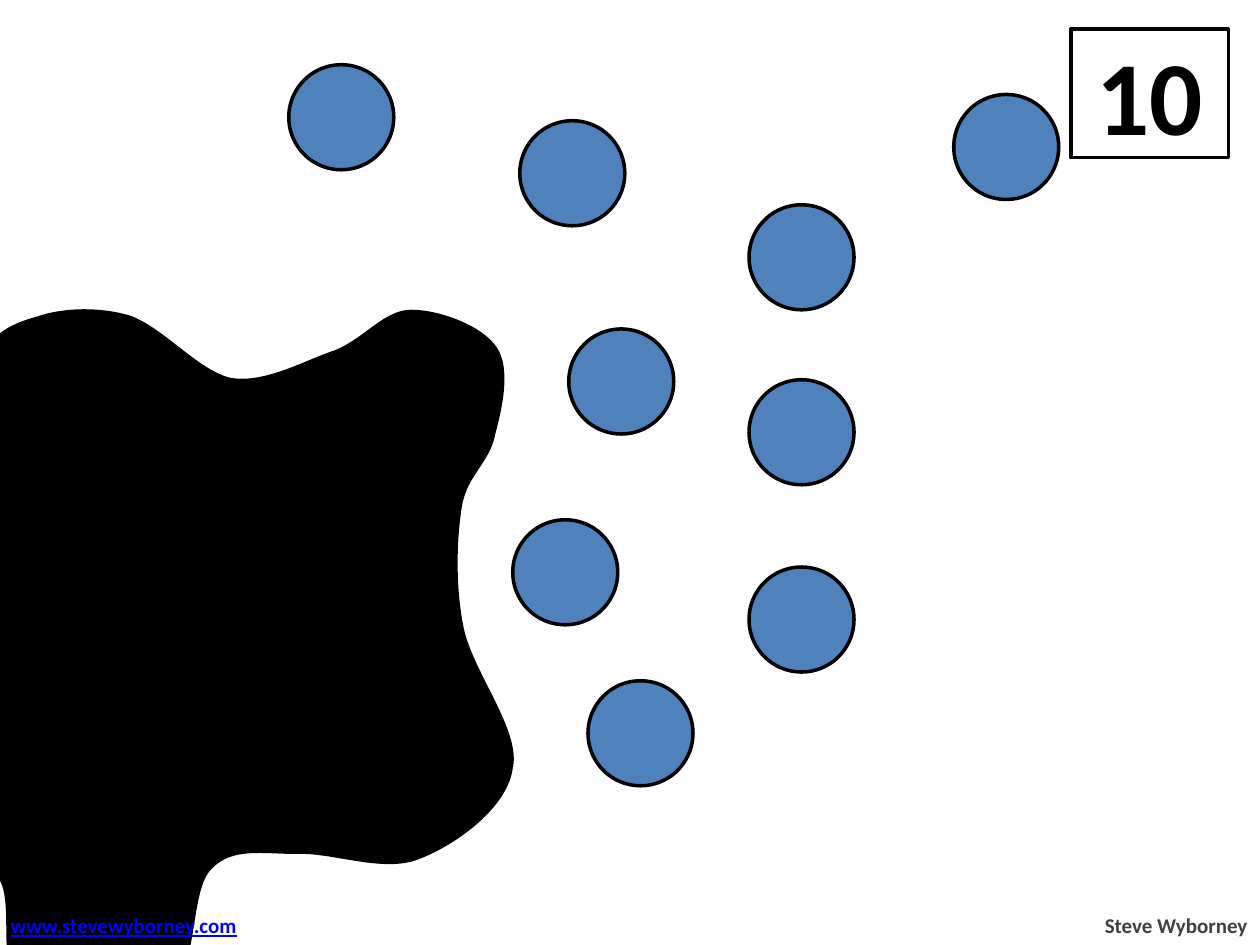
from copy import deepcopy

from lxml.etree import SubElement
from pptx import Presentation
from pptx.dml.color import RGBColor
from pptx.enum.shapes import MSO_SHAPE as Shape
from pptx.enum.text import MSO_ANCHOR as Anchor, PP_ALIGN as Align
from pptx.oxml.ns import qn
from pptx.util import Pt

BLACK = RGBColor(0x00, 0x00, 0x00)
WHITE = RGBColor(0xFF, 0xFF, 0xFF)
DOT_BLUE = RGBColor(0x4F, 0x81, 0xBD)
ADDRESS_BLUE = RGBColor(0x00, 0x00, 0xFF)
GREY = RGBColor(0x40, 0x40, 0x40)

DOT_SIZE = 60
DOT_CORNERS = [
    (165, 37), (297, 69), (545, 54), (336, 389), (293, 297),
    (428, 117), (428, 324), (428, 217), (325, 188),
]

SPLAT_START = (-102, 461)
SPLAT_CURVES = [
    [(-117, 451), (-127, 439), (-130, 425)],
    [(-131, 410), (-129, 390), (-113, 373)],
    [(-97, 356), (-52, 341), (-33, 325)],
    [(-14, 307), (-4, 292), (-1, 274)],
    [(4, 254), (-14, 224), (-11, 209)],
    [(-7, 193), (6, 186), (21, 182)],
    [(35, 177), (55, 176), (73, 181)],
    [(92, 187), (113, 213), (132, 217)],
    [(152, 220), (174, 207), (192, 201)],
    [(209, 194), (220, 178), (235, 178)],
    [(251, 178), (275, 187), (283, 199)],
    [(291, 211), (286, 233), (282, 248)],
    [(279, 264), (266, 271), (263, 289)],
    [(260, 307), (259, 335), (264, 359)],
    [(269, 384), (297, 418), (292, 439)],
    [(289, 461), (260, 482), (239, 490)],
    [(219, 498), (190, 486), (170, 487)],
    [(150, 487), (132, 483), (120, 496)],
    [(108, 508), (112, 548), (99, 563)],
    [(86, 577), (57, 585), (42, 585)],
    [(27, 585), (16, 575), (9, 562)],
    [(1, 548), (8, 516), (1, 503)],
    [(-6, 489), (-19, 486), (-36, 479)],
    [(-53, 472), (-86, 469), (-102, 461)],
]


class SlideBuilder:
    def __init__(self, slide, font="Calibri", outline=2):
        self.slide = slide
        self.font = font
        self.outline = outline

    def paint(self, shape, fill):
        shape.shadow.inherit = False
        shape.fill.solid()
        shape.fill.fore_color.rgb = fill
        shape.line.color.rgb = BLACK
        shape.line.width = Pt(self.outline)
        return shape

    def shape(self, kind, left, top, width, height, fill):
        shape = self.slide.shapes.add_shape(
            kind, Pt(left), Pt(top), Pt(width), Pt(height))
        return self.paint(shape, fill)

    def add_span(self, para, text, size, color, underline=False):
        span = para.add_run()
        span.text = text
        span.font.name = self.font
        span.font.size = Pt(size)
        span.font.bold = True
        span.font.underline = underline
        span.font.color.rgb = color

    def number_card(self, text, left, top, width, height):
        card = self.shape(Shape.RECTANGLE, left, top, width, height, WHITE)
        card.text_frame.vertical_anchor = Anchor.MIDDLE
        para = card.text_frame.paragraphs[0]
        para.alignment = Align.CENTER
        self.add_span(para, text, 60, BLACK)

    def footer(self, text, left, width, align, color, underline=False):
        box = self.slide.shapes.add_textbox(
            Pt(left), Pt(518), Pt(width), Pt(22))
        box.text_frame.word_wrap = False
        para = box.text_frame.paragraphs[0]
        para.alignment = align
        self.add_span(para, text, 12, color, underline)

    def curved_shape(self, start, curves, fill):
        builder = self.slide.shapes.build_freeform(*start, scale=Pt(1))
        builder.add_line_segments(
            [point for curve in curves for point in curve], close=True)
        shape = self.paint(builder.convert_to_shape(), fill)
        segments = list(shape.element.iter(qn("a:lnTo")))
        outline = segments[0].getparent()
        close = outline.find(qn("a:close"))
        for first in range(0, len(curves) * 3, 3):
            curve = SubElement(outline, qn("a:cubicBezTo"))
            for segment in segments[first:first + 3]:
                curve.append(deepcopy(segment[0]))
                outline.remove(segment)
        outline.append(close)


def main():
    deck = Presentation()
    deck.slide_width = Pt(720)
    deck.slide_height = Pt(540)
    page = SlideBuilder(deck.slides.add_slide(deck.slide_layouts[6]))

    for left, top in DOT_CORNERS:
        page.shape(Shape.OVAL, left, top, DOT_SIZE, DOT_SIZE, DOT_BLUE)
    page.footer("Steve Wyborney", 623.5, 96.5, Align.RIGHT, GREY)
    page.number_card("10", 612, 16.5, 90, 73.5)
    page.curved_shape(SPLAT_START, SPLAT_CURVES, BLACK)
    page.footer("www.stevewyborney.com", -1, 148, Align.LEFT, ADDRESS_BLUE, True)

    deck.save("out.pptx")


if __name__ == "__main__":
    main()
